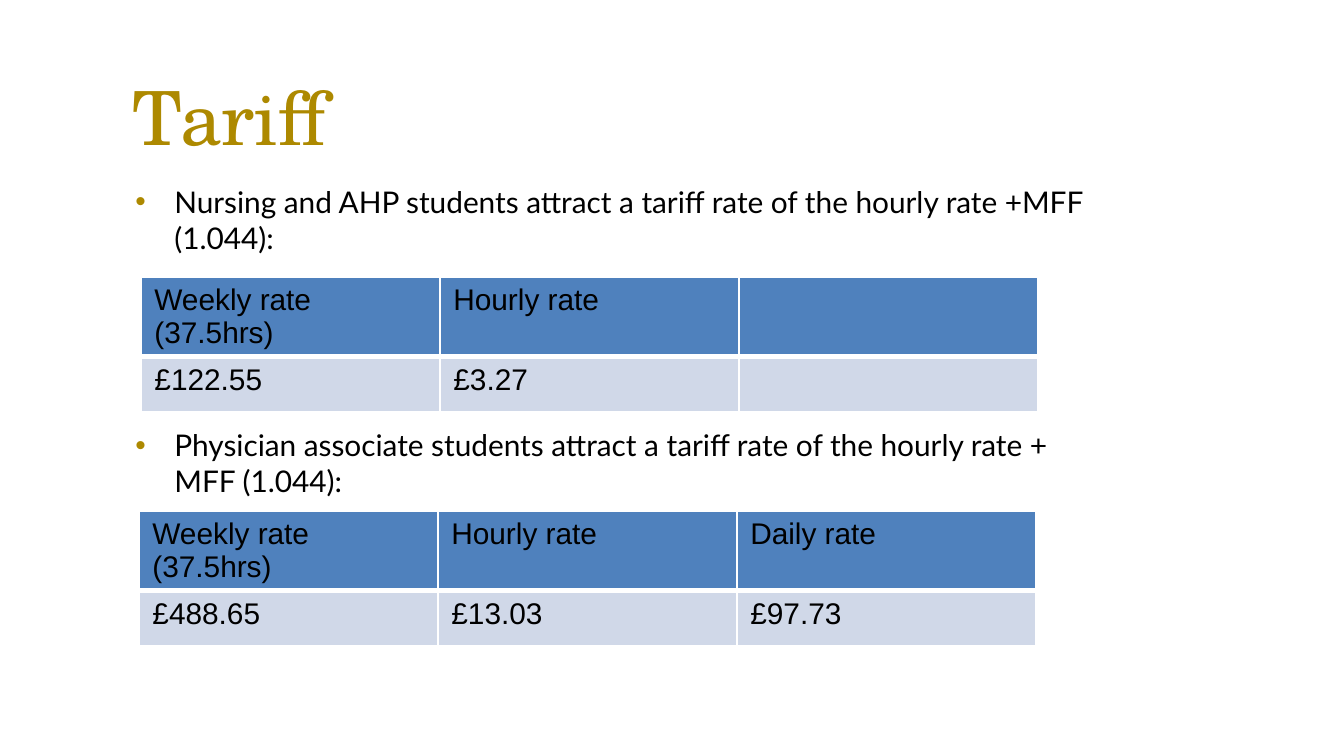
from dataclasses import dataclass

from lxml import etree
from pptx import Presentation
from pptx.dml.color import RGBColor
from pptx.enum import text
from pptx.oxml import ns
from pptx.util import Pt

PX = 914400 / 134.4  # EMU in one px


@dataclass(frozen=True)
class Theme:
    gold: str = "AD8900"
    black: str = "000000"
    white: str = "FFFFFF"
    header: str = "4F81BD"
    band: str = "D0D8E8"
    title_font: str = "TeX Gyre Schola"
    body_font: str = "Lato"
    table_font: str = "Arial"
    title_size: int = 40
    text_size: int = 16


THEME = Theme()

BULLETS = [
    "Nursing and AHP students attract a tariff rate of the hourly rate +MFF (1.044):",
    "Physician associate students attract a tariff rate of the hourly rate + MFF (1.044):",
]
NURSING_RATES = [["Weekly rate (37.5hrs)", "Hourly rate", ""],
                 ["£122.55", "£3.27", ""]]
PHYSICIAN_RATES = [["Weekly rate (37.5hrs)", "Hourly rate", "Daily rate"],
                   ["£488.65", "£13.03", "£97.73"]]


def px(length):
    return round(length * PX)


def style(paragraph, font, size, color):
    for run in paragraph.runs:
        run.font.name = font
        run.font.size = Pt(size)
        run.font.bold = False
        run.font.color.rgb = RGBColor.from_string(color)


def add_child(parent, tag, **attributes):
    return etree.SubElement(parent, ns.qn(tag), attributes)


def place(placeholder, left, top, width, height):
    placeholder.left, placeholder.top = px(left), px(top)
    placeholder.width, placeholder.height = px(width), px(height)
    frame = placeholder.text_frame
    frame.word_wrap = True
    frame.auto_size = text.MSO_AUTO_SIZE.NONE
    frame.vertical_anchor = text.MSO_ANCHOR.TOP
    return frame


def fill_title(placeholder, wording):
    frame = place(placeholder, 132, 82, 980, 71)
    frame.margin_left = frame.margin_right = 0
    frame.margin_top = frame.margin_bottom = 0
    frame.text = wording
    heading = frame.paragraphs[0]
    heading.alignment = text.PP_ALIGN.LEFT
    heading.line_spacing = Pt(42)
    heading.space_before = Pt(0)
    style(heading, THEME.title_font, THEME.title_size, THEME.gold)


def add_bullet(paragraph):
    properties = paragraph._p.get_or_add_pPr()
    properties.set("marL", str(px(39)))
    properties.set("indent", str(px(-39)))
    color = add_child(properties, "a:buClr")
    add_child(color, "a:srgbClr", val=THEME.gold)
    add_child(properties, "a:buFont", typeface="Arial")
    add_child(properties, "a:buChar", char="•")


def fill_bullets(placeholder, bullets):
    frame = place(placeholder, 122, 177, 991, 454)
    frame.text = "\n".join(bullets)
    for index, bullet in enumerate(frame.paragraphs):
        add_bullet(bullet)
        # The second bullet leaves room for the first table
        bullet.space_before = Pt(92 if index else 0)
        style(bullet, THEME.body_font, THEME.text_size, THEME.black)


def add_borders(cell, bottom):
    properties = cell._tc.get_or_add_tcPr()
    for side, points in (("L", 1), ("R", 1), ("T", 1), ("B", bottom)):
        line = add_child(properties, f"a:ln{side}", w=str(Pt(points)))
        solid = add_child(line, "a:solidFill")
        add_child(solid, "a:srgbClr", val=THEME.white)


def add_rate_table(slide, left, top, rates):
    columns = len(rates[0])
    table = slide.shapes.add_table(len(rates), columns, px(left), px(top),
                                   px(299 * columns), px(134)).table
    for column in table.columns:
        column.width = px(299)
    for row, height in zip(table.rows, (79, 55)):
        row.height = px(height)
    for row_index, values in enumerate(rates):
        for column_index, value in enumerate(values):
            cell = table.cell(row_index, column_index)
            is_header = row_index == 0
            add_borders(cell, 3 if is_header else 1)
            cell.fill.solid()
            cell.fill.fore_color.rgb = RGBColor.from_string(
                THEME.header if is_header else THEME.band)
            if value:
                cell.text_frame.text = value
                style(cell.text_frame.paragraphs[0], THEME.table_font,
                      THEME.text_size, THEME.black)


def main():
    deck = Presentation()
    deck.slide_width, deck.slide_height = px(1344), px(756)
    slide = deck.slides.add_slide(deck.slide_layouts[1])

    # Heading and bullets
    fill_title(slide.shapes.title, "Tariff")
    fill_bullets(slide.placeholders[1], BULLETS)

    # Rates below each bullet
    add_rate_table(slide, 141, 277, NURSING_RATES)
    add_rate_table(slide, 139, 511, PHYSICIAN_RATES)

    deck.save("out.pptx")


if __name__ == "__main__":
    main()
